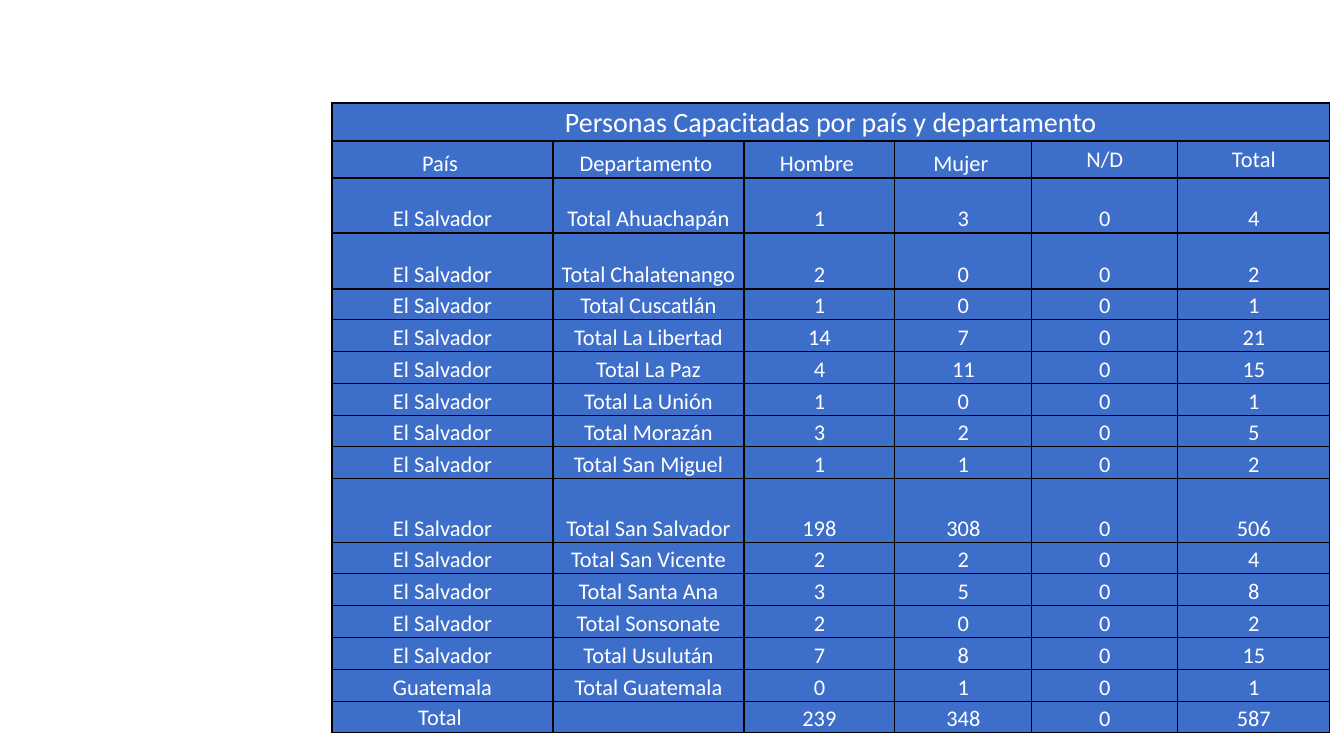
from dataclasses import dataclass
from itertools import pairwise

from lxml.etree import SubElement
from pptx import Presentation
from pptx.dml.color import RGBColor
from pptx.enum.text import MSO_ANCHOR as Anchor, PP_ALIGN as Align
from pptx.oxml.ns import qn
from pptx.util import Pt

TITLE = "Personas Capacitadas por país y departamento"
HEADERS = ("País ", "Departamento ", "Hombre ", "Mujer ", "N/D", "Total")
EL_SALVADOR = (
    ("Ahuachapán", 1, 3, 0, 4),
    ("Chalatenango", 2, 0, 0, 2),
    ("Cuscatlán", 1, 0, 0, 1),
    ("La Libertad", 14, 7, 0, 21),
    ("La Paz", 4, 11, 0, 15),
    ("La Unión", 1, 0, 0, 1),
    ("Morazán", 3, 2, 0, 5),
    ("San Miguel", 1, 1, 0, 2),
    ("San Salvador", 198, 308, 0, 506),
    ("San Vicente", 2, 2, 0, 4),
    ("Santa Ana", 3, 5, 0, 8),
    ("Sonsonate", 2, 0, 0, 2),
    ("Usulután", 7, 8, 0, 15),
)
GUATEMALA = (("Guatemala", 0, 1, 0, 1),)
GRAND_TOTAL = ("Total ", "", 239, 348, 0, 587)

COLUMN_EDGES = (332, 553, 744, 895, 1032, 1178, 1330)
ROW_EDGES = (103, 141, 178, 233, 289, 320, 352, 384, 416, 447, 479,
             543, 574, 606, 638, 670, 702, 733)
SLIDE_SIZE = (1344, 756)
EMU_PER_PX = 914400 / 100.8


@dataclass(frozen=True)
class Theme:
    font: str = "Calibri"
    title_size: int = 20
    body_size: int = 16
    text: str = "FFFFFF"
    fill: str = "3D6EC9"
    border: str = "000000"
    border_width: int = 1


THEME = Theme()


def px(length):
    return round(length * EMU_PER_PX)


def add_borders(cell):
    properties = cell._tc.get_or_add_tcPr()
    for side in ("lnL", "lnR", "lnT", "lnB"):
        line = SubElement(properties, qn(f"a:{side}"), w=str(Pt(THEME.border_width)))
        solid = SubElement(line, qn("a:solidFill"))
        SubElement(solid, qn("a:srgbClr"), val=THEME.border)


def write_cell(cell, text, size=THEME.body_size, anchor=Anchor.BOTTOM):
    cell.margin_left = cell.margin_right = cell.margin_top = px(1)
    cell.margin_bottom = 0
    cell.vertical_anchor = anchor
    add_borders(cell)
    cell.fill.solid()
    cell.fill.fore_color.rgb = RGBColor.from_string(THEME.fill)
    paragraph = cell.text_frame.paragraphs[0]
    paragraph.alignment = Align.CENTER
    if not text:
        SubElement(paragraph._p, qn("a:endParaRPr"), sz=str(size * 100))
        return
    run = paragraph.add_run()
    run.text = text
    run.font.name = THEME.font
    run.font.size = Pt(size)
    run.font.color.rgb = RGBColor.from_string(THEME.text)


def table_rows():
    rows = [HEADERS]
    for country, departments in (("El Salvador", EL_SALVADOR), ("Guatemala", GUATEMALA)):
        rows += [(country, f"Total {name}", *counts) for name, *counts in departments]
    return rows + [GRAND_TOTAL]


def add_people_table(slide):
    left, top = COLUMN_EDGES[0], ROW_EDGES[0]
    width, height = COLUMN_EDGES[-1] - left, ROW_EDGES[-1] - top
    table = slide.shapes.add_table(
        len(ROW_EDGES) - 1, len(HEADERS), px(left), px(top), px(width), px(height)
    ).table
    for column, (start, end) in zip(table.columns, pairwise(COLUMN_EDGES)):
        column.width = px(end - start)
    for row, (start, end) in zip(table.rows, pairwise(ROW_EDGES)):
        row.height = px(end - start)

    table.cell(0, 0).merge(table.cell(0, len(HEADERS) - 1))
    for index in range(len(HEADERS)):
        write_cell(table.cell(0, index), "" if index else TITLE,
                   size=THEME.title_size, anchor=Anchor.MIDDLE)
    for row_index, values in enumerate(table_rows(), start=1):
        for index, value in enumerate(values):
            centred = value in ("N/D", "Total", "Total ")
            write_cell(table.cell(row_index, index), str(value),
                       anchor=Anchor.MIDDLE if centred else Anchor.BOTTOM)


def main():
    presentation = Presentation()
    presentation.slide_width, presentation.slide_height = map(px, SLIDE_SIZE)
    slide = presentation.slides.add_slide(presentation.slide_layouts[6])
    add_people_table(slide)
    presentation.save("out.pptx")


if __name__ == "__main__":
    main()
